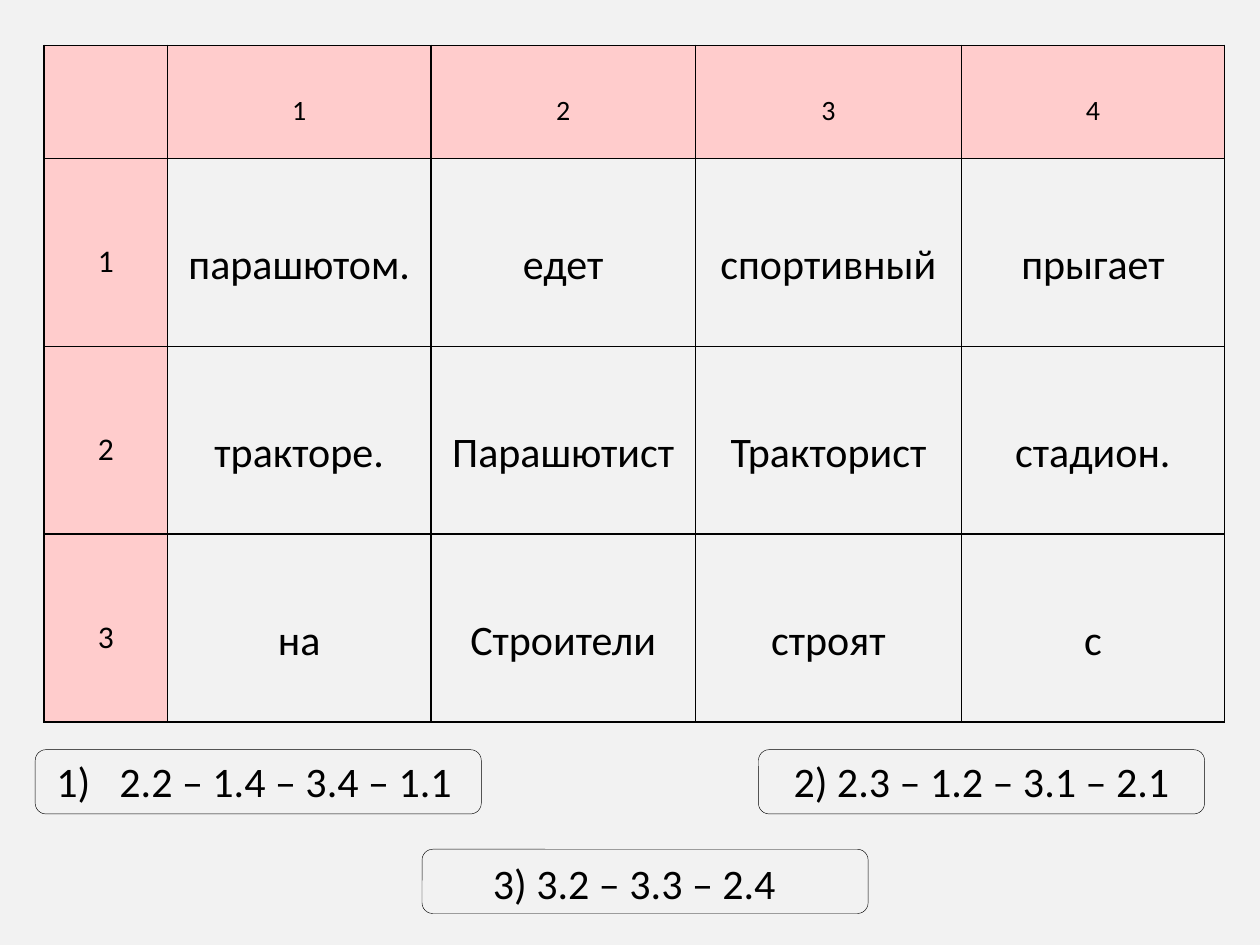
import dataclasses

import pptx
import pptx.dml.color
import pptx.enum.shapes
import pptx.enum.text
import pptx.oxml.ns
import pptx.slide
import pptx.table
import pptx.text.text
import pptx.util
from lxml import etree
from pptx.util import Inches


@dataclasses.dataclass(frozen=True)
class Theme:
    font: str = "Calibri"
    ink: str = "000000"
    paper: str = "F2F2F2"
    heading: str = "FFCCCC"
    column_size: int = 16
    row_size: int = 18
    body_size: int = 24
    border: float = 1
    outline: float = 0.25


@dataclasses.dataclass(frozen=True)
class AnswerFrame:
    left: float
    top: float
    width: float = 3.54
    height: float = 0.51


THEME = Theme()
WORDS = [
    ["парашютом.", "едет", "спортивный", "прыгает"],
    ["тракторе.", "Парашютист", "Тракторист", "стадион."],
    ["на", "Строители", "строят", "с"],
]
COLUMN_WIDTHS = [0.98, 2.09, 2.1, 2.11, 2.09]
ROW_HEIGHTS = [0.9, 1.49, 1.49, 1.49]
CONTENT_LEFT, CONTENT_WIDTH = 0.35, 9.37
FRAMES = [AnswerFrame(3.35, 6.74), AnswerFrame(0.28, 5.95), AnswerFrame(6.02, 5.95)]


def rgb(color: str) -> pptx.dml.color.RGBColor:
    return pptx.dml.color.RGBColor.from_string(color)


def apply(target: object, values: dict) -> None:
    for attribute, value in values.items():
        setattr(target, attribute, value)


def add_element(parent: etree._Element, tag: str, **attributes: str) -> etree._Element:
    return etree.SubElement(parent, pptx.oxml.ns.qn(tag), attributes)


def style_text(paragraph: pptx.text.text._Paragraph, size: int) -> None:
    for run in paragraph.runs:
        apply(run.font, {"name": THEME.font, "size": pptx.util.Pt(size)})
        run.font.color.rgb = rgb(THEME.ink)


def add_borders(cell: pptx.table._Cell) -> None:
    """Put the four lines ahead of the fill, as the schema requires."""
    properties = cell._tc.get_or_add_tcPr()
    for position, side in enumerate(("a:lnL", "a:lnR", "a:lnT", "a:lnB")):
        line = add_element(properties, side, w=str(pptx.util.Pt(THEME.border)))
        add_element(add_element(line, "a:solidFill"), "a:srgbClr", val=THEME.ink)
        properties.insert(position, line)


def fill_cell(cell: pptx.table._Cell, text: str, size: int, color: str) -> None:
    apply(cell, {
        "vertical_anchor": pptx.enum.text.MSO_ANCHOR.MIDDLE,
        "margin_left": Inches(0.07), "margin_right": Inches(0.07),
        "margin_top": 0, "margin_bottom": 0,
    })
    cell.fill.solid()
    cell.fill.fore_color.rgb = rgb(color)
    add_borders(cell)
    if text:
        paragraph = cell.text_frame.paragraphs[0]
        paragraph.text = text
        apply(paragraph, {"alignment": pptx.enum.text.PP_ALIGN.CENTER, "line_spacing": 1.5})
        style_text(paragraph, size)


def add_word_table(slide: pptx.slide.Slide) -> None:
    table = slide.shapes.add_table(
        len(ROW_HEIGHTS), len(COLUMN_WIDTHS), Inches(CONTENT_LEFT), Inches(0.36),
        Inches(CONTENT_WIDTH), Inches(sum(ROW_HEIGHTS)),
    ).table
    apply(table, {"first_row": False, "horz_banding": False})
    for column, width in zip(table.columns, COLUMN_WIDTHS):
        column.width = Inches(width)
    for row, height in zip(table.rows, ROW_HEIGHTS):
        row.height = Inches(height)

    column_numbers = [str(number) for number in range(1, len(COLUMN_WIDTHS))]
    numbered_rows = [[str(number), *words] for number, words in enumerate(WORDS, 1)]
    for r, texts in enumerate([["", *column_numbers], *numbered_rows]):
        for c, text in enumerate(texts):
            size = THEME.column_size if r == 0 else THEME.row_size if c == 0 else THEME.body_size
            color = THEME.heading if r == 0 or c == 0 else THEME.paper
            fill_cell(table.cell(r, c), text, size, color)


def add_frame(slide: pptx.slide.Slide, frame: AnswerFrame) -> None:
    outline = slide.shapes.add_shape(
        pptx.enum.shapes.MSO_SHAPE.ROUNDED_RECTANGLE, Inches(frame.left),
        Inches(frame.top), Inches(frame.width), Inches(frame.height),
    )
    outline.shadow.inherit = False
    outline.fill.solid()
    outline.fill.fore_color.rgb = rgb(THEME.paper)
    outline.line.color.rgb = rgb(THEME.ink)
    outline.line.width = pptx.util.Pt(THEME.outline)


def add_answers(slide: pptx.slide.Slide) -> None:
    """Write the first two answers on one tabbed line, the third centred below."""
    answers = slide.shapes.add_textbox(
        Inches(CONTENT_LEFT), Inches(5.95), Inches(CONTENT_WIDTH), Inches(1.31)
    ).text_frame
    answers.word_wrap = True

    upper = answers.paragraphs[0]
    upper.text = "2.2 – 1.4 – 3.4 – 1.1\t2) 2.3 – 1.2 – 3.1 – 2.1"
    properties = upper._p.get_or_add_pPr()
    properties.set("marL", str(Inches(0.5)))
    properties.set("indent", str(Inches(-0.5)))
    add_element(properties, "a:buFont", typeface=THEME.font)
    add_element(properties, "a:buAutoNum", type="arabicParenR")
    tabs = add_element(properties, "a:tabLst")
    add_element(tabs, "a:tab", pos=str(Inches(5.85)), algn="l")

    lower = answers.add_paragraph()
    lower.text = "3) 3.2 – 3.3 – 2.4"
    apply(lower, {
        "alignment": pptx.enum.text.PP_ALIGN.CENTER,
        "space_before": pptx.util.Pt(29),
    })
    for paragraph in (upper, lower):
        style_text(paragraph, THEME.body_size)


def main() -> None:
    presentation = pptx.Presentation()
    apply(presentation, {"slide_width": Inches(10), "slide_height": Inches(7.5)})
    slide = presentation.slides.add_slide(presentation.slide_layouts[6])
    slide.background.fill.solid()
    slide.background.fill.fore_color.rgb = rgb(THEME.paper)
    for frame in FRAMES:
        add_frame(slide, frame)
    add_word_table(slide)
    add_answers(slide)
    presentation.save("out.pptx")


if __name__ == "__main__":
    main()
